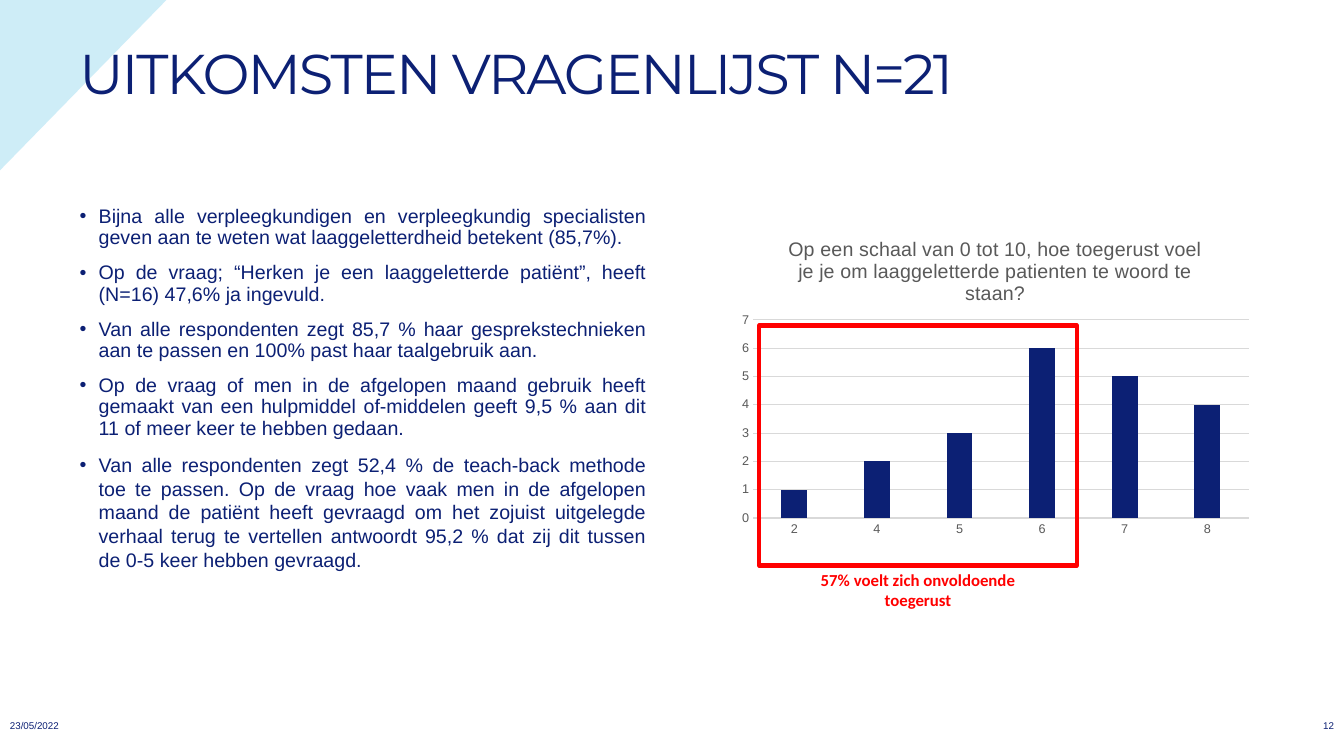
from lxml import etree
from pptx import Presentation
from pptx import util as u
from pptx.chart.data import CategoryChartData
from pptx.dml.color import RGBColor
from pptx.enum import chart as charts, shapes, text
from pptx.oxml import parse_xml
from pptx.oxml.ns import nsdecls, qn

COLORS = {"navy": "0C2074", "sky": "86D2ED", "red": "FF0000", "grey": "595959", "grid": "D9D9D9"}
FINDINGS = [
    "Bijna alle verpleegkundigen en verpleegkundig specialisten geven aan te weten wat "
    "laaggeletterdheid betekent (85,7%).",
    "Op de vraag; “Herken je een laaggeletterde patiënt”, heeft (N=16) 47,6% ja ingevuld.",
    "Van alle respondenten zegt 85,7 % haar gesprekstechnieken aan te passen en 100% past "
    "haar taalgebruik aan.",
    "Op de vraag of men in de afgelopen maand gebruik heeft gemaakt van een hulpmiddel "
    "of-middelen geeft 9,5 % aan dit 11 of meer keer te hebben gedaan.",
    "Van alle respondenten zegt 52,4 % de teach-back methode toe te passen. Op de vraag hoe "
    "vaak men in de afgelopen maand de patiënt heeft gevraagd om het zojuist uitgelegde "
    "verhaal terug te vertellen antwoordt 95,2 % dat zij dit tussen de 0-5 keer hebben gevraagd.",
]
QUESTION = "Op een schaal van 0 tot 10, hoe toegerust voel je je om laaggeletterde patienten te woord te staan?"
SCORES = {"2": 1, "4": 2, "5": 3, "6": 6, "7": 5, "8": 4}


class SlideBuilder:
    """Holds the style and the current slide, and adds each kind of element."""

    def __init__(self, page):
        self.page = page

    def color(self, name):
        return RGBColor.from_string(COLORS[name])

    def font(self, font, size, color="navy", face="Arial", bold=False):
        font.name, font.size, font.bold = face, u.Pt(size), bold
        font.color.rgb = self.color(color)

    def shape(self, kind, area):
        shape = self.page.shapes.add_shape(kind, *map(u.Inches, area))
        shape.shadow.inherit = False
        return shape

    def corner(self, area, color, opacity):
        triangle = self.shape(shapes.MSO_SHAPE.RIGHT_TRIANGLE, area)
        triangle.rotation = 90
        triangle.line.fill.background()
        triangle.fill.solid()
        triangle.fill.fore_color.rgb = self.color(color)
        tint = triangle.fill._xPr.find(qn("a:solidFill"))[0]
        etree.SubElement(tint, qn("a:alpha"), val=str(opacity * 1000))

    def frame(self, area, color, width):
        frame = self.shape(shapes.MSO_SHAPE.RECTANGLE, area)
        frame.fill.background()
        frame.line.color.rgb = self.color(color)
        frame.line.width = u.Pt(width)

    def text(self, area, words, size, align=text.PP_ALIGN.LEFT, anchor=text.MSO_ANCHOR.TOP, **style):
        box = self.page.shapes.add_textbox(*map(u.Inches, area)).text_frame
        box.word_wrap = True
        box.vertical_anchor = anchor
        para = box.paragraphs[0]
        para.text, para.alignment = words, align
        self.font(para.font, size, **style)
        return para

    def title(self, area, words):
        para = self.text(area, words, 40, anchor=text.MSO_ANCHOR.MIDDLE, face="Montserrat")
        para.line_spacing = 0.9
        para.runs[0].font._element.set("spc", "-150")

    def bullets(self, area, items, size):
        box = self.page.shapes.add_textbox(*map(u.Inches, area)).text_frame
        box.word_wrap = True
        for index, item in enumerate(items):
            para = box.add_paragraph() if index else box.paragraphs[0]
            para.text, para.alignment = item, text.PP_ALIGN.JUSTIFY
            para.line_spacing = 1.0 if item == items[-1] else 0.9
            para.space_before = u.Pt(10 if index else 0)
            indent = u.Inches(0.19)
            props = para._p.get_or_add_pPr()
            props.set("marL", str(indent))
            props.set("indent", str(-indent))
            etree.SubElement(props, qn("a:buFont"), typeface="Arial")
            etree.SubElement(props, qn("a:buChar"), char="•")
            self.font(para.font, size)

    def layout(self, **values):
        target = '<c:layoutTarget val="inner"/>' if "w" in values else ""
        modes = "".join(f'<c:{key}Mode val="edge"/>' for key in "xy")
        sizes = "".join(f'<c:{key} val="{value}"/>' for key, value in values.items())
        return parse_xml(f'<c:layout {nsdecls("c")}><c:manualLayout>{target}{modes}{sizes}'
                         "</c:manualLayout></c:layout>")

    def chart(self, area, question, scores):
        data = CategoryChartData()
        data.categories = list(scores)
        data.add_series("Series 1", list(scores.values()))
        chart = self.page.shapes.add_chart(
            charts.XL_CHART_TYPE.COLUMN_CLUSTERED, *map(u.Inches, area), data).chart
        self.font(chart.font, 9, "grey")
        chart.has_legend = False
        para = chart.chart_title.text_frame.paragraphs[0]
        para.text = question
        self.font(para.font, 14, "grey")
        title = chart.chart_title._element
        for old in title.findall(qn("c:layout")):
            title.remove(old)
        title.find(qn("c:tx")).addnext(self.layout(x=0.1, y=0.05))
        plot_area = chart._chartSpace.chart.plotArea
        for old in plot_area.findall(qn("c:layout")):
            plot_area.remove(old)
        plot_area.insert(0, self.layout(x=0.04, y=0.315, w=0.94, h=0.605))

        plot = chart.plots[0]
        plot.gap_width, plot.overlap, plot.vary_by_categories = 219, -27, False
        bars = plot.series[0].format.fill
        bars.solid()
        bars.fore_color.rgb = self.color("navy")
        levels = chart.value_axis
        levels.minimum_scale, levels.maximum_scale, levels.major_unit = 0, 7, 1
        levels.format.line.fill.background()
        for axis in (chart.category_axis, levels):
            axis.major_tick_mark = charts.XL_TICK_MARK.NONE
            self.font(axis.tick_labels.font, 9, "grey")
        for line in (chart.category_axis.format.line, levels.major_gridlines.format.line):
            line.color.rgb = self.color("grid")
            line.width = u.Pt(0.75)


def main():
    deck = Presentation()
    deck.slide_width, deck.slide_height = u.Inches(13.33), u.Inches(7.5)
    slide = SlideBuilder(deck.slides.add_slide(deck.slide_layouts[6]))
    slide.corner((-0.02, 0, 1.71, 1.67), "sky", 40)
    slide.bullets((0.69, 2, 5.82, 4.41), FINDINGS, 14)
    slide.title((0.69, 0.4, 11.16, 0.71), "UITKOMSTEN VRAGENLIJST N=21")
    slide.text((0, 7.09, 0.91, 0.22), "23/05/2022", 7)
    slide.text((12.8, 7.09, 0.53, 0.22), "12", 7, text.PP_ALIGN.RIGHT)
    slide.chart((7.26, 2.15, 5.23, 3.25), QUESTION, SCORES)
    slide.frame((7.53, 3.23, 3.15, 2.38), "red", 3)
    slide.text((7.77, 5.6, 2.67, 0.5), "57% voelt zich onvoldoende toegerust", 12,
               text.PP_ALIGN.CENTER, color="red", face="Calibri", bold=True)
    deck.save("out.pptx")


if __name__ == "__main__":
    main()
